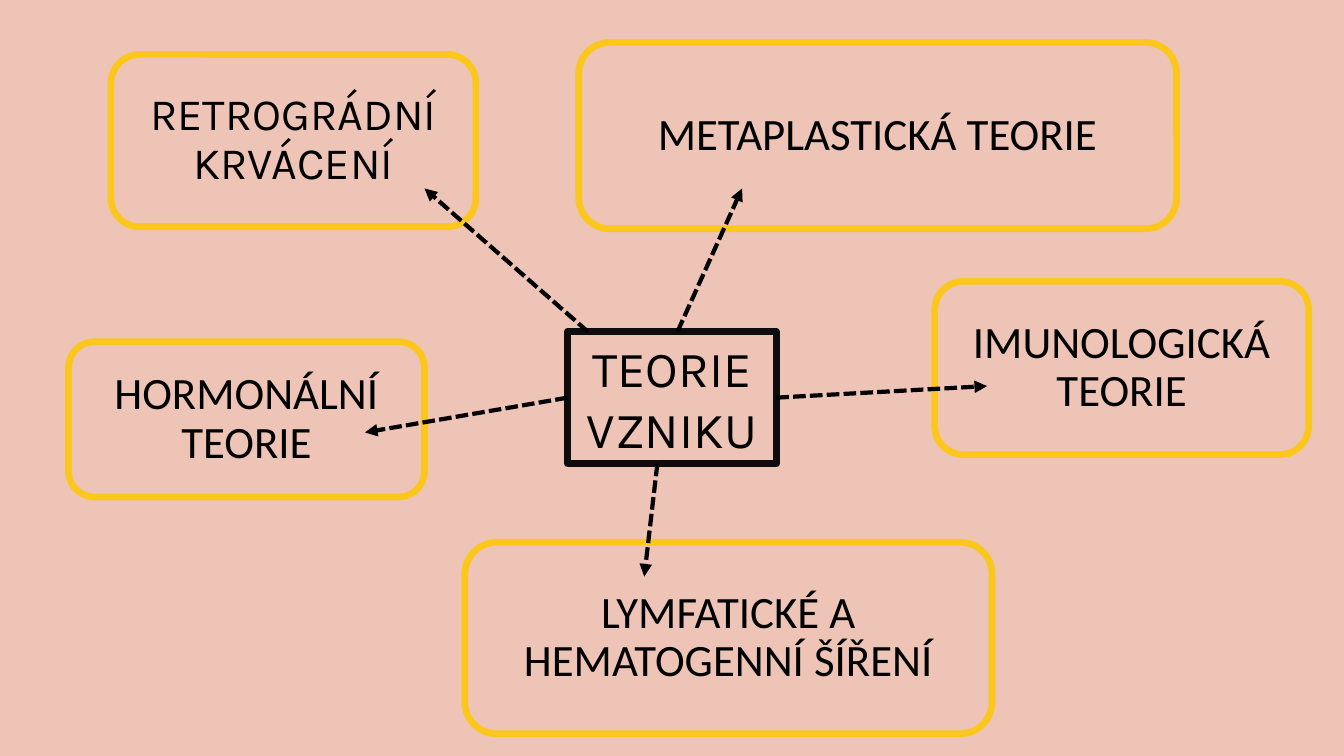
from lxml import etree
from pptx import Presentation
from pptx.dml.color import RGBColor
from pptx.enum.dml import MSO_LINE
from pptx.enum.shapes import MSO_CONNECTOR, MSO_SHAPE
from pptx.enum.text import MSO_ANCHOR, MSO_AUTO_SIZE, PP_ALIGN
from pptx.oxml.ns import qn
from pptx.util import Inches, Pt

ROUNDED = MSO_SHAPE.FLOWCHART_ALTERNATE_PROCESS
RECTANGLE = MSO_SHAPE.RECTANGLE
STRAIGHT = MSO_CONNECTOR.STRAIGHT
DASHED = MSO_LINE.SQUARE_DOT
MIDDLE = MSO_ANCHOR.MIDDLE
CENTER = PP_ALIGN.CENTER
GROW = MSO_AUTO_SIZE.SHAPE_TO_FIT_TEXT

PEACH = RGBColor(0xED, 0xC4, 0xB5)
YELLOW = RGBColor(0xFC, 0xC7, 0x1C)
INK = RGBColor(0x0D, 0x0D, 0x0D)
BLACK = RGBColor(0, 0, 0)


def add_box(page, kind, place, text, line_color, line_width, font):
    """Add an outlined box with centred text."""
    box = page.shapes.add_shape(kind, *map(Inches, place))
    box.shadow.inherit = False
    box.fill.background()
    box.line.color.rgb = line_color
    box.line.width = Pt(line_width)
    frame = box.text_frame
    frame.word_wrap = True
    frame.vertical_anchor = MIDDLE
    para = frame.paragraphs[0]
    para.alignment = CENTER
    span = para.add_run()
    span.text = text
    for name, value in font.items():
        setattr(span.font, name, value)
    span.font.color.rgb = BLACK
    return box


deck = Presentation()
deck.slide_width = Inches(13.33)
deck.slide_height = Inches(7.5)
page = deck.slides.add_slide(deck.slide_layouts[6])
page.background.fill.solid()
page.background.fill.fore_color.rgb = PEACH

# Theories around the centre: text, font, place
theories = [
    ("RETROGRÁDNÍ KRVÁCENÍ", "Karla", (1.1, 0.54, 3.62, 1.71)),
    ("METAPLASTICKÁ TEORIE", "Calibri", (5.74, 0.42, 5.93, 1.85)),
    ("HORMONÁLNÍ TEORIE", "Calibri", (0.68, 3.39, 3.53, 1.54)),
    ("LYMFATICKÉ A HEMATOGENNÍ ŠÍŘENÍ", "Calibri", (4.61, 5.38, 5.23, 1.9)),
    ("IMUNOLOGICKÁ TEORIE", "Calibri", (9.27, 2.79, 3.71, 1.72)),
]
for text, font_name, place in theories:
    font = {"name": font_name, "size": Pt(32)}
    theory = add_box(page, ROUNDED, place, text, YELLOW, 4.75, font)
    theory.text_frame.paragraphs[0].line_spacing = 0.9
    for side in ("left", "top", "right", "bottom"):
        setattr(theory.text_frame, f"margin_{side}", Inches(0.13))

# Central topic
topic_font = {"name": "Karla", "size": Pt(36)}
topic = add_box(page, RECTANGLE, (5.63, 3.29, 2.07, 1.31), "TEORIE VZNIKU",
                INK, 5, topic_font)
topic.text_frame.auto_size = GROW

# Dashed arrows: start, end, side of the topic they are joined to
arrows = [
    ((6.72, 3.29), (7.36, 1.87), None),
    ((5.83, 3.29), (4.21, 1.87), None),
    ((7.7, 3.95), (9.79, 3.83), 3),
    ((5.63, 3.95), (3.62, 4.29), 1),
    ((6.52, 4.6), (6.39, 5.72), None),
]
for start, end, side in arrows:
    arrow = page.shapes.add_connector(STRAIGHT, *map(Inches, start + end))
    if side is not None:
        arrow.begin_connect(topic, side)
    arrow.line.color.rgb = BLACK
    arrow.line.width = Pt(3)
    arrow.line.dash_style = DASHED
    outline = arrow.line._get_or_add_ln()
    etree.SubElement(outline, qn("a:tailEnd"), type="triangle")
    etree.SubElement(outline.getparent(), qn("a:effectLst"))

deck.save("out.pptx")
